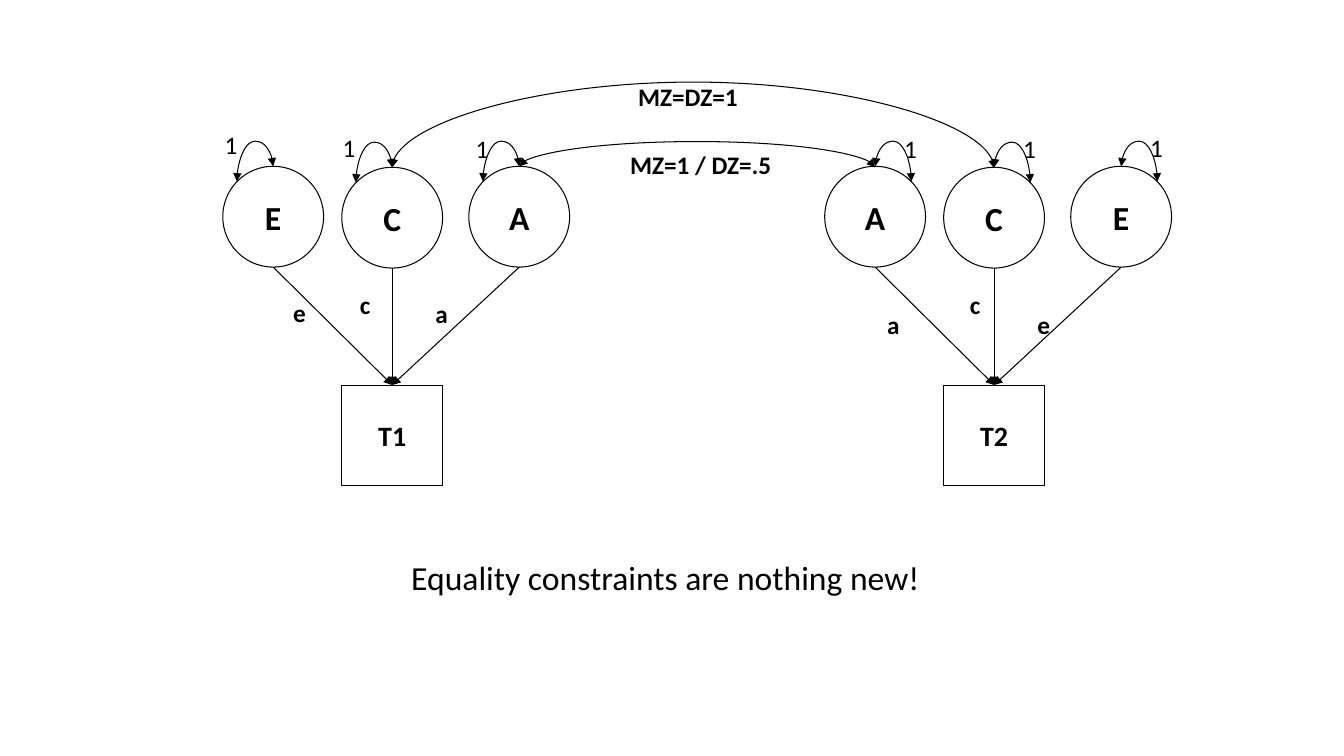
from lxml.etree import SubElement
from pptx import Presentation
from pptx.dml.color import RGBColor
from pptx.enum.shapes import MSO_CONNECTOR as LINE, MSO_SHAPE as SHAPE
from pptx.enum.text import MSO_ANCHOR as ANCHOR, MSO_AUTO_SIZE as FIT, PP_ALIGN as ALIGN
from pptx.oxml.ns import qn
from pptx.util import Pt

PX = 9144  # 100 px to the inch
FONT = "Calibri"
COLORS = {"ink": "000000", "paper": "FFFFFF"}
NODE = 100  # side of a circle or square
LATENT_OFFSETS = [(0, 0), (118, 1), (244, 0)]
TWIN_OFFSET = (118, 217)


def color(name):
    return RGBColor.from_string(COLORS[name])


def write(frame, text, size, bold, align=None):
    paragraph = frame.paragraphs[0]
    paragraph.alignment = align
    run = paragraph.add_run()
    run.text = text
    run.font.name, run.font.size, run.font.bold = FONT, Pt(size), bold
    run.font.color.rgb = color("ink")


def add_label(slide, box, text, size=18, bold=True, wrap=False):
    label = slide.shapes.add_textbox(*(PX * v for v in box))
    label.text_frame.word_wrap = wrap
    label.text_frame.auto_size = FIT.SHAPE_TO_FIT_TEXT
    write(label.text_frame, text, size, bold)


def add_node(slide, kind, left, top, text, size):
    node = slide.shapes.add_shape(kind, PX * left, PX * top, PX * NODE, PX * NODE)
    node.shadow.inherit = False
    node.fill.solid()
    node.fill.fore_color.rgb = color("paper")
    node.line.color.rgb = color("ink")
    node.line.width = Pt(0.75)
    node.text_frame.word_wrap = False
    node.text_frame.vertical_anchor = ANCHOR.MIDDLE
    write(node.text_frame, text, size, True, ALIGN.CENTER)


def add_arrow(slide, kind, start, end, heads):
    arrow = slide.shapes.add_connector(kind, *(PX * v for v in (*start, *end)))
    arrow.line.color.rgb = color("ink")
    arrow.line.width = Pt(0.75)
    for head in heads:
        SubElement(arrow.line._get_or_add_ln(), qn(f"a:{head}"), type="triangle")
    SubElement(arrow._element.spPr, qn("a:effectLst"))
    return arrow


def add_arc(slide, start, end, rise):
    """Double-headed curve that climbs `rise` above its start."""
    (x1, y1), (x2, y2) = start, end
    drop, span = max(y2 - y1, 1), abs(x2 - x1)
    arc = add_arrow(slide, LINE.CURVE, start, end, ["headEnd", "tailEnd"])
    # The curve runs sideways by default, so its frame is turned upright
    arc.left = round(PX * ((x1 + x2 - drop) / 2))
    arc.top = round(PX * (y1 + (drop - span) / 2))
    arc.width, arc.height = PX * drop, PX * span
    frame = arc._element.spPr.find(qn("a:xfrm"))
    rightward = x2 > x1
    frame.set("rot", str((90 if rightward else 270) * 60000))
    frame.set("flipH", "0" if rightward else "1")
    frame.set("flipV", "1")
    guides = arc._element.spPr.find(qn("a:prstGeom")).get_or_add_avLst()
    SubElement(guides, qn("a:gd"), name="adj1", fmla=f"val {round(-rise / drop * 100000)}")


def add_twin(slide, left, top, name, factors, loop_dx):
    """Factors: letter, variance label offset, path label offset."""
    twin_x, twin_y = left + TWIN_OFFSET[0], top + TWIN_OFFSET[1]
    add_node(slide, SHAPE.RECTANGLE, twin_x, twin_y, name, 20)
    for (dx, dy), (letter, variance_at, path_at) in zip(LATENT_OFFSETS, factors):
        x, y = left + dx, top + dy
        peak = (x + NODE // 2, y)
        add_node(slide, SHAPE.OVAL, x, y, letter, 24)
        # Path from the factor to the twin
        add_arrow(slide, LINE.STRAIGHT, (peak[0], y + NODE),
                  (twin_x + NODE // 2, twin_y), ["tailEnd"])
        add_label(slide, (left + path_at[0], top + path_at[1], 32, 40), letter.lower())
        # Variance loop
        add_arc(slide, peak, (peak[0] + loop_dx, y + 15), 25)
        add_label(slide, (left + variance_at[0], top + variance_at[1], 33, 40),
                  "1", bold=False)


def add_correlations(slide, left, right, top):
    """Arcs between the two twins: C to C, then A to A."""
    middle = NODE // 2
    c_dx, a_dx = LATENT_OFFSETS[1][0], LATENT_OFFSETS[2][0]
    add_arc(slide, (left + c_dx + middle, top + 1), (right + c_dx + middle, top + 1), 86)
    add_arc(slide, (left + a_dx + middle, top), (right + middle, top), 25)
    add_label(slide, (623, top - 89, 119, 40), "MZ=DZ=1")
    add_label(slide, (615, top - 22, 161, 40), "MZ=1 / DZ=.5")


def main():
    deck = Presentation()
    deck.slide_width, deck.slide_height = PX * 1333, PX * 750
    slide = deck.slides.add_slide(deck.slide_layouts[6])
    left, right, top = 221, 818, 165
    add_twin(slide, left, top, "T1", [
        ("E", (-8, -42), (60, 125)),
        ("C", (109, -39), (126, 117)),
        ("A", (241, -38), (201, 126)),
    ], -36)
    add_twin(slide, right, top, "T2", [
        ("A", (69, -38), (52, 137)),
        ("C", (187, -38), (134, 117)),
        ("E", (313, -39), (201, 137)),
    ], 36)
    add_correlations(slide, left, right, top)
    # Closing remark
    add_label(slide, (398, 548, 621, 50), "Equality constraints are nothing new!",
              size=24, bold=False, wrap=True)
    deck.save("out.pptx")


if __name__ == "__main__":
    main()
